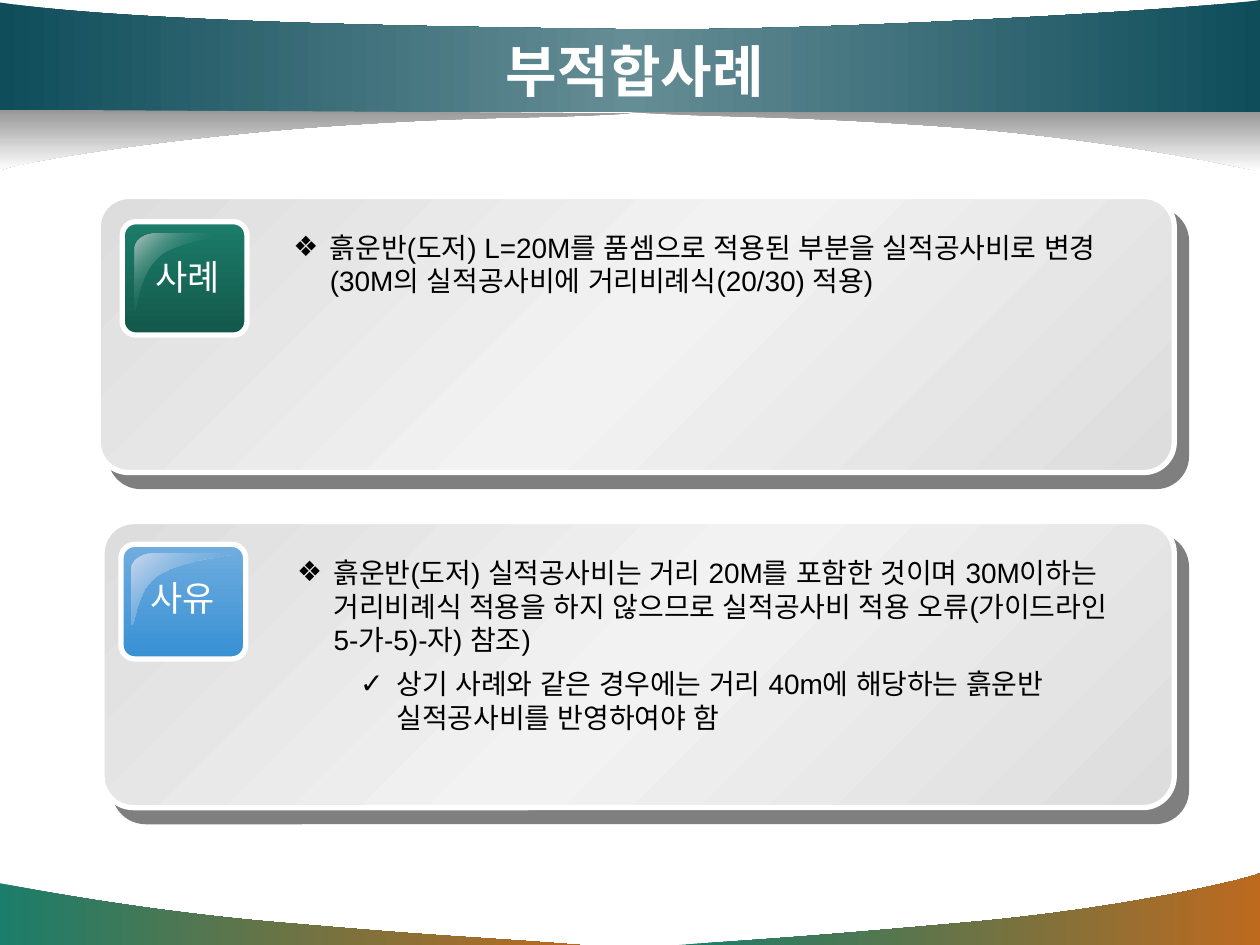
from lxml.etree import SubElement
from pptx import Presentation
from pptx.dml.color import RGBColor
from pptx.enum.shapes import MSO_SHAPE
from pptx.enum.text import MSO_ANCHOR, PP_ALIGN
from pptx.oxml.ns import qn
from pptx.util import Pt

PX = 9144  # 100 px to the inch
FONT = "Arial"
WHITE = RGBColor(0xFF, 0xFF, 0xFF)
BLACK = RGBColor(0, 0, 0)
GREEN = RGBColor(0x1B, 0x7D, 0x6A)
DARK_GREEN = RGBColor(0x14, 0x58, 0x4A)
ORANGE = RGBColor(0xBD, 0x6A, 0x1F)
GRAY = RGBColor(0x96, 0x96, 0x96)
TEAL = RGBColor(0x0F, 0x4D, 0x5B)
PALE_TEAL = RGBColor(0x65, 0x8D, 0x95)
CARD_EDGE = RGBColor(0xDD, 0xDD, 0xDD)
CARD_MIDDLE = RGBColor(0xF2, 0xF2, 0xF2)
LIGHT_BLUE = RGBColor(0x70, 0xAD, 0xE0)
BLUE = RGBColor(0x37, 0x90, 0xD3)
GREEN_SHINE = RGBColor(0xB6, 0xC6, 0xC1)
BLUE_SHINE = RGBColor(0xCB, 0xD9, 0xEE)


class SlideBuilder:
    def __init__(self, slide):
        self.slide = slide
        self.shapes = slide.shapes

    def gradient(self, shape, stops, angle):
        """Fill with (position, colour[, opacity]) stops, angle clockwise."""
        shape.fill.gradient()
        shape.fill.gradient_angle = -angle % 360
        stop_list = shape._element.spPr.find(qn("a:gradFill")).find(qn("a:gsLst"))
        for old_stop in list(stop_list):
            stop_list.remove(old_stop)
        for position, color, *opacity in stops:
            stop = SubElement(stop_list, qn("a:gs"), pos=str(position * 1000))
            color_node = SubElement(stop, qn("a:srgbClr"), val=str(color))
            for value in opacity:
                SubElement(color_node, qn("a:alpha"), val=str(value * 1000))

    def curved(self, start, segments, stops, angle):
        """Closed outline whose segments are one point (line) or three (curve)."""
        builder = self.shapes.build_freeform(start[0] * PX, start[1] * PX)
        builder.add_line_segments(
            [(segment[-1][0] * PX, segment[-1][1] * PX) for segment in segments])
        shape = builder.convert_to_shape()
        lines = list(shape._element.iter(qn("a:lnTo")))
        for line, segment in zip(lines, segments):
            if len(segment) == 3:
                curve = line.makeelement(qn("a:cubicBezTo"))
                for x, y in segment:
                    SubElement(curve, qn("a:pt"), x=str(x * PX - shape.left),
                               y=str(y * PX - shape.top))
                line.getparent().replace(line, curve)
        shape.shadow.inherit = False
        shape.line.fill.background()
        self.gradient(shape, stops, angle)

    def rounded(self, left, top, width, height, radius, stops, angle, shadow=False):
        shape = self.shapes.add_shape(MSO_SHAPE.ROUNDED_RECTANGLE,
                                      left * PX, top * PX, width * PX, height * PX)
        shape.adjustments[0] = radius
        shape.shadow.inherit = False
        self.gradient(shape, stops, angle)
        shape.line.color.rgb = WHITE
        shape.line.width = Pt(3)
        if shadow:
            effects = shape._element.spPr.find(qn("a:effectLst"))
            outer = SubElement(effects, qn("a:outerShdw"), dist=str(Pt(10.6)),
                               dir=str(49 * 60000), algn="ctr", rotWithShape="0")
            color_node = SubElement(outer, qn("a:srgbClr"), val=str(BLACK))
            SubElement(color_node, qn("a:alpha"), val="50000")

    def style(self, paragraph, size, color, bold=False):
        paragraph.font.name = FONT
        paragraph.font.size = Pt(size)
        paragraph.font.color.rgb = color
        paragraph.font.bold = bold
        # East Asian text takes the same font
        SubElement(paragraph._p.pPr.find(qn("a:defRPr")), qn("a:ea"), typeface=FONT)

    def text_frame(self, left, top, width, height):
        box = self.shapes.add_textbox(left * PX, top * PX, width * PX, height * PX)
        box.text_frame.word_wrap = True
        return box.text_frame

    def title(self, text, left, top, width, height):
        title = self.shapes.title
        title.left, title.top = left * PX, top * PX
        title.width, title.height = width * PX, height * PX
        title.text_frame.text = text
        title.text_frame.vertical_anchor = MSO_ANCHOR.MIDDLE
        paragraph = title.text_frame.paragraphs[0]
        paragraph.alignment = PP_ALIGN.CENTER
        self.style(paragraph, 32, WHITE, bold=True)
        self.shapes._spTree.append(title._element)  # bring above the banner

    def label(self, text, left, top, width):
        paragraph = self.text_frame(left, top, width, 44).paragraphs[0]
        paragraph.text = text
        paragraph.alignment = PP_ALIGN.CENTER
        self.style(paragraph, 20, WHITE)

    def bullets(self, items, left, top, width, height):
        """Items are (text, level) pairs."""
        frame = self.text_frame(left, top, width, height)
        for index, (text, level) in enumerate(items):
            paragraph = frame.add_paragraph() if index else frame.paragraphs[0]
            paragraph.text = text
            paragraph.level = level
            if index:
                paragraph.space_before = Pt(6)
            properties = paragraph._p.get_or_add_pPr()
            properties.set("marL", str((29 + 50 * level) * PX))
            properties.set("indent", str(-29 * PX))
            SubElement(properties, qn("a:buFont"), typeface=FONT)
            SubElement(properties, qn("a:buChar"), char="❖✓"[level])
            self.style(paragraph, 16, BLACK)

    def shine(self, x, y, height, stops):
        """Highlight along the left and top of a tile."""
        bottom = y + height
        self.curved((x + 16, y), [
            [(x + 7, y), (x, y + 6), (x, y + 12)],
            [(x, bottom - 1)],
            [(x + 4, bottom), (x + 2, bottom - 29), (x + 22, y + 17)],
            [(x + 42, y + 4), (x + 82, y + 3), (x + 81, y)],
            [(x + 16, y)],
        ], stops, 45)


def main():
    presentation = Presentation()
    presentation.slide_width, presentation.slide_height = 1000 * PX, 750 * PX
    builder = SlideBuilder(presentation.slides.add_slide(presentation.slide_layouts[5]))

    # Bottom corners
    corner_stops = [(0, GREEN), (100, ORANGE)]
    builder.curved((460, 750), [
        [(384, 744), (358, 744), (232, 733)], [(106, 723), (1, 701), (0, 701)],
        [(0, 750)], [(460, 750)]], corner_stops, 0)
    builder.curved((539, 750), [
        [(614, 745), (646, 743), (769, 732)], [(892, 721), (990, 698), (1000, 693)],
        [(1000, 750)], [(539, 750)]], corner_stops, 0)

    # Banner with the shade below it
    shade_stops = [(0, GRAY), (100, WHITE)]
    builder.curved((500, 89), [
        [(584, 94), (620, 91), (758, 101)], [(897, 112), (998, 136), (1000, 136)],
        [(1000, 88)], [(500, 89)]], shade_stops, 90)
    builder.curved((0, 89), [
        [(1000, 89)], [(1000, 0)], [(964, 6), (653, 26), (487, 23)],
        [(321, 21), (101, 17), (0, 2)], [(0, 89)]],
        [(0, TEAL), (50, PALE_TEAL), (100, TEAL)], 0)
    builder.curved((500, 90), [
        [(416, 95), (388, 91), (249, 101)], [(110, 112), (11, 130), (0, 135)],
        [(0, 87)], [(500, 90)]], shade_stops, 90)
    builder.title("부적합사례", 75, 25, 858, 62)

    # Case card
    card_stops = [(0, CARD_EDGE), (50, CARD_MIDDLE), (100, CARD_EDGE)]
    builder.rounded(78, 156, 854, 219, 0.11, card_stops, 45, shadow=True)
    builder.rounded(97, 176, 99, 90, 0.12, [(0, GREEN), (100, DARK_GREEN)], 90)
    builder.shine(107, 185, 62, [(0, GREEN_SHINE), (50, GREEN, 0), (100, GREEN_SHINE)])
    builder.label("사례", 99, 198, 100)
    builder.bullets([
        ("흙운반(도저) L=20M를 품셈으로 적용된 부분을 실적공사비로 변경"
         "(30M의 실적공사비에 거리비례식(20/30) 적용)", 0),
    ], 223, 178, 699, 64)

    # Reason card
    builder.rounded(81, 414, 851, 227, 0.11, card_stops, 45, shadow=True)
    builder.rounded(96, 432, 99, 91, 0.12, [(0, LIGHT_BLUE), (100, BLUE)], 90)
    builder.shine(104, 439, 58, [(0, BLUE_SHINE), (100, BLUE, 0)])
    builder.label("사유", 101, 453, 88)
    builder.bullets([
        ("흙운반(도저) 실적공사비는 거리 20M를 포함한 것이며 30M이하는 거리비례식 "
         "적용을 하지 않으므로 실적공사비 적용 오류(가이드라인 5-가-5)-자) 참조)", 0),
        ("상기 사례와 같은 경우에는 거리 40m에 해당하는 흙운반 실적공사비를 "
         "반영하여야 함", 1),
    ], 226, 436, 688, 153)

    presentation.save("out.pptx")


if __name__ == "__main__":
    main()
